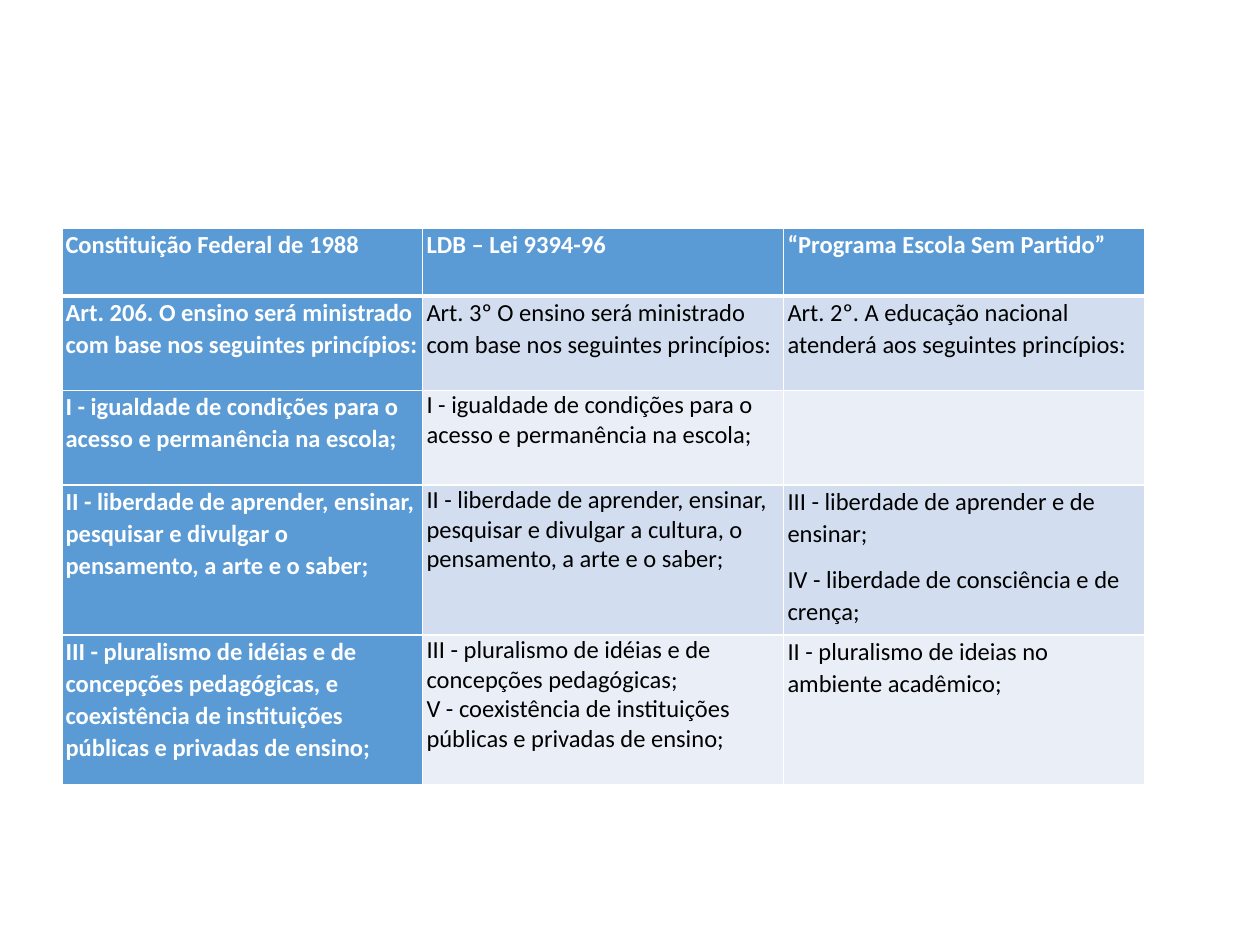
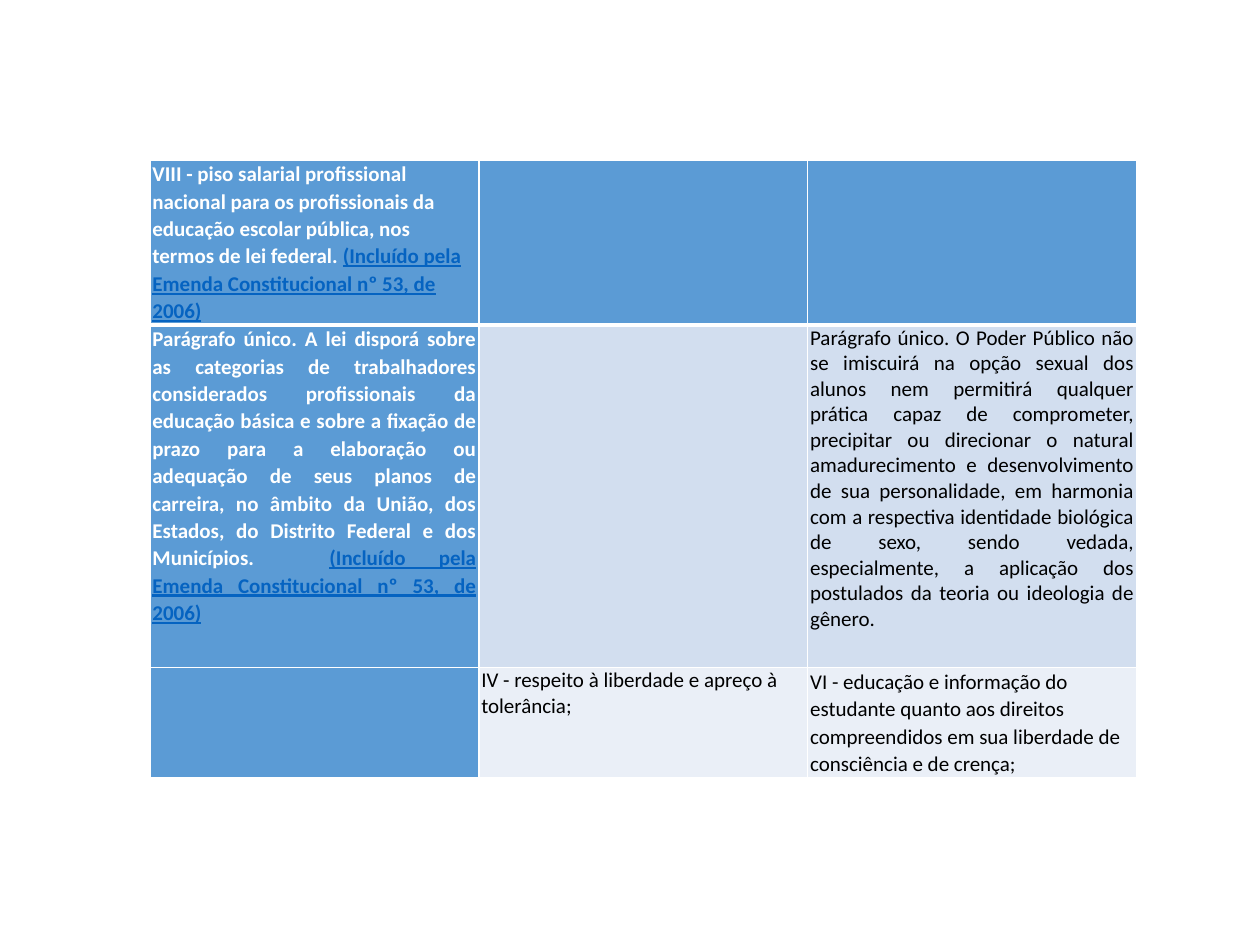
from dataclasses import dataclass

from lxml.etree import SubElement
from pptx import Presentation
from pptx.dml.color import RGBColor
from pptx.enum.text import PP_ALIGN
from pptx.oxml.ns import qn
from pptx.util import Inches, Pt


@dataclass(frozen=True)
class Theme:
    font: str = "Calibri"
    blue: str = "5B9BD5"
    bands: tuple = ("D2DEEF", "EAEFF7")
    white: str = "FFFFFF"
    black: str = "000000"
    link: str = "0563C1"
    large: int = 14
    small: int = 12
    thin: float = 1
    thick: float = 3


@dataclass
class Para:
    text: str
    note: str = ""       # underlined reference after the text
    gap: float = 0       # extra points between text and reference
    spacing: float = 1.07
    after: float = 0
    align: PP_ALIGN = PP_ALIGN.LEFT


def set_attrs(obj, values):
    for name, value in values.items():
        setattr(obj, name, value)


class Deck:
    def __init__(self, theme):
        self.theme = theme
        self.prs = Presentation()
        set_attrs(self.prs, {"slide_width": Inches(10), "slide_height": Inches(7.5)})
        self.s = None

    def add_slide(self):
        self.s = self.prs.slides.add_slide(self.prs.slide_layouts[6])

    def add_run(self, p, text, size, color, bold, underline=False):
        r = p.add_run()
        r.text = text
        set_attrs(r.font, {"name": self.theme.font, "size": Pt(size),
                           "bold": bold, "underline": underline})
        r.font.color.rgb = RGBColor.from_string(color)
        return r

    def add_para(self, p, para, size, color, bold):
        set_attrs(p, {"line_spacing": para.spacing, "space_after": Pt(para.after),
                      "space_before": Pt(0), "alignment": para.align})
        self.add_run(p, para.text, size, color, bold)
        if para.note:
            space = self.add_run(p, " ", size, color, bold)
            if para.gap:
                space._r.get_or_add_rPr().set("spc", str(round(para.gap * 100)))
            self.add_run(p, para.note, size, self.theme.link, bold, True)

    def add_borders(self, cell, row):
        tc_pr = cell._tc.get_or_add_tcPr()
        heavy = {0: "lnB", 1: "lnT"}.get(row)  # rule under the header row
        for side in ("lnL", "lnR", "lnT", "lnB"):
            width = self.theme.thick if side == heavy else self.theme.thin
            ln = SubElement(tc_pr, qn(f"a:{side}"), w=str(Pt(width)))
            fill = SubElement(ln, qn("a:solidFill"))
            SubElement(fill, qn("a:srgbClr"), val=self.theme.white)

    def add_table(self, left, top, col_width, heights, rows, size, margin):
        t = self.theme
        n_cols = len(rows[0])
        table = self.s.shapes.add_table(
            len(rows), n_cols, Inches(left), Inches(top),
            Inches(col_width * n_cols), Inches(sum(heights))).table
        set_attrs(table, {"first_col": True})
        for col in table.columns:
            col.width = Inches(col_width)
        for i, (height, cells) in enumerate(zip(heights, rows)):
            table.rows[i].height = Inches(height)
            for j, paras in enumerate(cells):
                cell = table.cell(i, j)
                strong = i == 0 or j == 0
                set_attrs(cell, {"margin_left": Inches(margin), "margin_right": Inches(margin),
                                 "margin_top": 0, "margin_bottom": 0})
                self.add_borders(cell, i)
                cell.fill.solid()
                cell.fill.fore_color.rgb = RGBColor.from_string(
                    t.blue if strong else t.bands[(i - 1) % 2])
                tf = cell.text_frame
                for k, para in enumerate(paras):
                    p = tf.add_paragraph() if k else tf.paragraphs[0]
                    self.add_para(p, para, size, t.white if strong else t.black, strong)


AMENDMENT = "(Incluído pela Emenda Constitucional nº 53, de 2006)"

# Constitution, education law and bill, side by side
PRINCIPLES = [
    [[Para("Constituição Federal de 1988")],
     [Para("LDB – Lei 9394-96")],
     [Para("“Programa Escola Sem Partido”")]],
    [[Para("Art. 206. O ensino será ministrado com base nos seguintes princípios:")],
     [Para("Art. 3º O ensino será ministrado com base nos seguintes princípios:")],
     [Para("Art. 2º. A educação nacional atenderá aos seguintes princípios:")]],
    [[Para("I - igualdade de condições para o acesso e permanência na escola;")],
     [Para("I - igualdade de condições para o acesso e permanência na escola;", spacing=1.0)],
     []],
    [[Para("II - liberdade de aprender, ensinar, pesquisar e divulgar o pensamento, "
           "a arte e o saber;")],
     [Para("II - liberdade de aprender, ensinar, pesquisar e divulgar a cultura, "
           "o pensamento, a arte e o saber;", spacing=1.0)],
     [Para("III - liberdade de aprender e de ensinar;", after=8),
      Para("IV - liberdade de consciência e de crença;")]],
    [[Para("III - pluralismo de idéias e de concepções pedagógicas, e coexistência de "
           "instituições públicas e privadas de ensino;")],
     [Para("III - pluralismo de idéias e de concepções pedagógicas;", spacing=1.0),
      Para("V - coexistência de instituições públicas e privadas de ensino;", spacing=1.0)],
     [Para("II - pluralismo de ideias no ambiente acadêmico;")]],
]

PROFESSIONALS = [
    [[Para("VIII - piso salarial profissional nacional para os profissionais da educação "
           "escolar pública, nos termos de lei federal.", AMENDMENT)],
     [], []],
    [[Para("Parágrafo único. A lei disporá sobre as categorias de trabalhadores considerados "
           "profissionais da educação básica e sobre a fixação de prazo para a elaboração ou "
           "adequação de seus planos de carreira, no âmbito da União, dos Estados, do Distrito "
           "Federal e dos Municípios.", AMENDMENT, gap=24, align=PP_ALIGN.JUSTIFY)],
     [],
     [Para("Parágrafo único. O Poder Público não se imiscuirá na opção sexual dos alunos nem "
           "permitirá qualquer prática capaz de comprometer, precipitar ou direcionar o natural "
           "amadurecimento e desenvolvimento de sua personalidade, em harmonia com a respectiva "
           "identidade biológica de sexo, sendo vedada, especialmente, a aplicação dos "
           "postulados da teoria ou ideologia de gênero.",
           spacing=1.0, align=PP_ALIGN.JUSTIFY)]],
    [[],
     [Para("IV - respeito à liberdade e apreço à tolerância;", spacing=1.0)],
     [Para("VI - educação e informação do estudante quanto aos direitos compreendidos em sua "
           "liberdade de consciência e de crença;")]],
]


def main():
    theme = Theme()
    deck = Deck(theme)

    # Slide 1: principles of teaching
    deck.add_slide()
    deck.add_table(0.49, 1.81, 2.865, [0.54, 0.75, 0.75, 1.19, 1.19],
                   PRINCIPLES, theme.large, 0.03)

    # Slide 2: education professionals
    deck.add_slide()
    deck.add_table(1.19, 1.27, 2.61, [1.31, 2.72, 0.86],
                   PROFESSIONALS, theme.small, 0.02)

    deck.prs.save("out.pptx")


if __name__ == "__main__":
    main()
